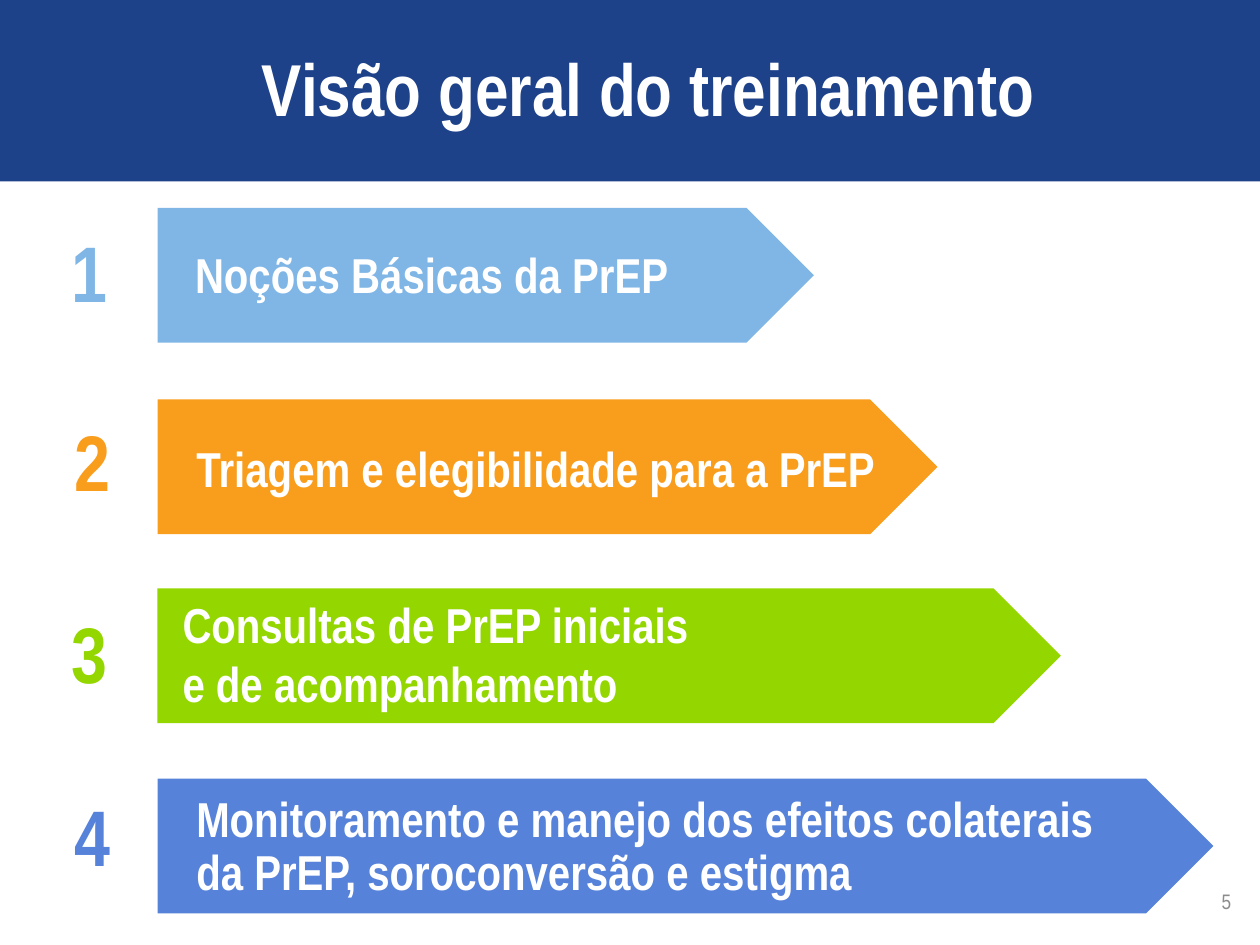
from dataclasses import dataclass

from pptx import Presentation
from pptx.dml.color import RGBColor
from pptx.enum.shapes import MSO_SHAPE as Shape
from pptx.enum.text import MSO_ANCHOR as Anchor, MSO_AUTO_SIZE as AutoSize, PP_ALIGN as Align
from pptx.shapes.autoshape import Shape as AutoShape
from pptx.slide import Slide
from pptx.util import Inches, Pt

FONT = "Arial Narrow"
COLORS = {
    "navy": "1E428A",
    "white": "FFFFFF",
    "gray": "8C8C8C",
    "sky": "80B6E6",
    "orange": "F99D1C",
    "green": "94D600",
    "blue": "5682DA",
}
ARROW_LEFT, ARROW_HEIGHT = 1.25, 1.07
NUMBER_WIDTH, NUMBER_HEIGHT = 0.63, 0.86

Box = tuple[float, float, float, float]


@dataclass
class Module:
    text: str
    color: str
    arrow_top: float
    arrow_width: float
    text_box: Box
    number_left: float
    number_top: float
    line_spacing: float = 1.0


MODULES = [
    Module("Noções Básicas da PrEP", "sky", 1.65, 5.21,
           (1.45, 1.89, 4.23, 0.57), 0.47, 1.73),
    Module("Triagem e elegibilidade para a PrEP", "orange", 3.17, 6.19,
           (1.46, 3.43, 5.62, 0.57), 0.49, 3.23),
    Module("Consultas de PrEP iniciais\ne de acompanhamento", "green", 4.67, 7.17,
           (1.35, 4.67, 6.09, 1.04), 0.47, 4.75),
    Module("Monitoramento e manejo dos efeitos colaterais da PrEP, soroconversão e estigma",
           "blue", 6.18, 8.38, (1.46, 6.26, 7.62, 0.96), 0.49, 6.2, 0.9),
]


def write_text(shape: AutoShape, text: str, *, size: float, color: str, bold: bool = True,
               align: Align = Align.LEFT, anchor: Anchor = Anchor.TOP,
               line_spacing: float = 1.0) -> None:
    frame = shape.text_frame
    frame.word_wrap = True
    frame.auto_size = AutoSize.NONE
    frame.vertical_anchor = anchor
    paragraph = frame.paragraphs[0]
    paragraph.text = text
    paragraph.alignment = align
    paragraph.line_spacing = line_spacing
    for run in paragraph.runs:
        run.font.name = FONT
        run.font.size = Pt(size)
        run.font.bold = bold
        run.font.color.rgb = RGBColor.from_string(COLORS[color])


def add_text(slide: Slide, box: Box, text: str, **text_format) -> None:
    write_text(slide.shapes.add_textbox(*map(Inches, box)), text, **text_format)


def add_block(slide: Slide, kind: Shape, box: Box, color: str) -> AutoShape:
    """Add a filled preset shape without outline or shadow."""
    shape = slide.shapes.add_shape(kind, *map(Inches, box))
    shape.shadow.inherit = False
    shape.fill.solid()
    shape.fill.fore_color.rgb = RGBColor.from_string(COLORS[color])
    shape.line.fill.background()
    return shape


def add_header(slide: Slide) -> None:
    band = add_block(slide, Shape.RECTANGLE, (0, 0, 10, 1.44), "navy")
    title = slide.shapes.title
    title.left, title.top, title.width, title.height = map(Inches, (0.45, 0.29, 9.39, 0.81))
    write_text(title, "Visão geral do treinamento", size=42, color="white",
               align=Align.CENTER)
    # The title placeholder comes first, so the band has to go behind it.
    title._element.addprevious(band._element)


def add_module(slide: Slide, number: int, module: Module) -> None:
    arrow_box = (ARROW_LEFT, module.arrow_top, module.arrow_width, ARROW_HEIGHT)
    add_block(slide, Shape.PENTAGON, arrow_box, module.color)
    add_text(slide, module.text_box, module.text, size=28, color="white",
             line_spacing=module.line_spacing)
    number_box = (module.number_left, module.number_top, NUMBER_WIDTH, NUMBER_HEIGHT)
    add_text(slide, number_box, str(number), size=45, color=module.color)


def main() -> None:
    presentation = Presentation()
    presentation.slide_width, presentation.slide_height = Inches(10), Inches(7.5)
    slide = presentation.slides.add_slide(presentation.slide_layouts[5])
    add_header(slide)
    add_text(slide, (7.54, 6.95, 2.33, 0.4), "5", size=12, color="gray", bold=False,
             align=Align.RIGHT, anchor=Anchor.MIDDLE)
    for number, module in enumerate(MODULES, start=1):
        add_module(slide, number, module)
    presentation.save("out.pptx")


if __name__ == "__main__":
    main()
